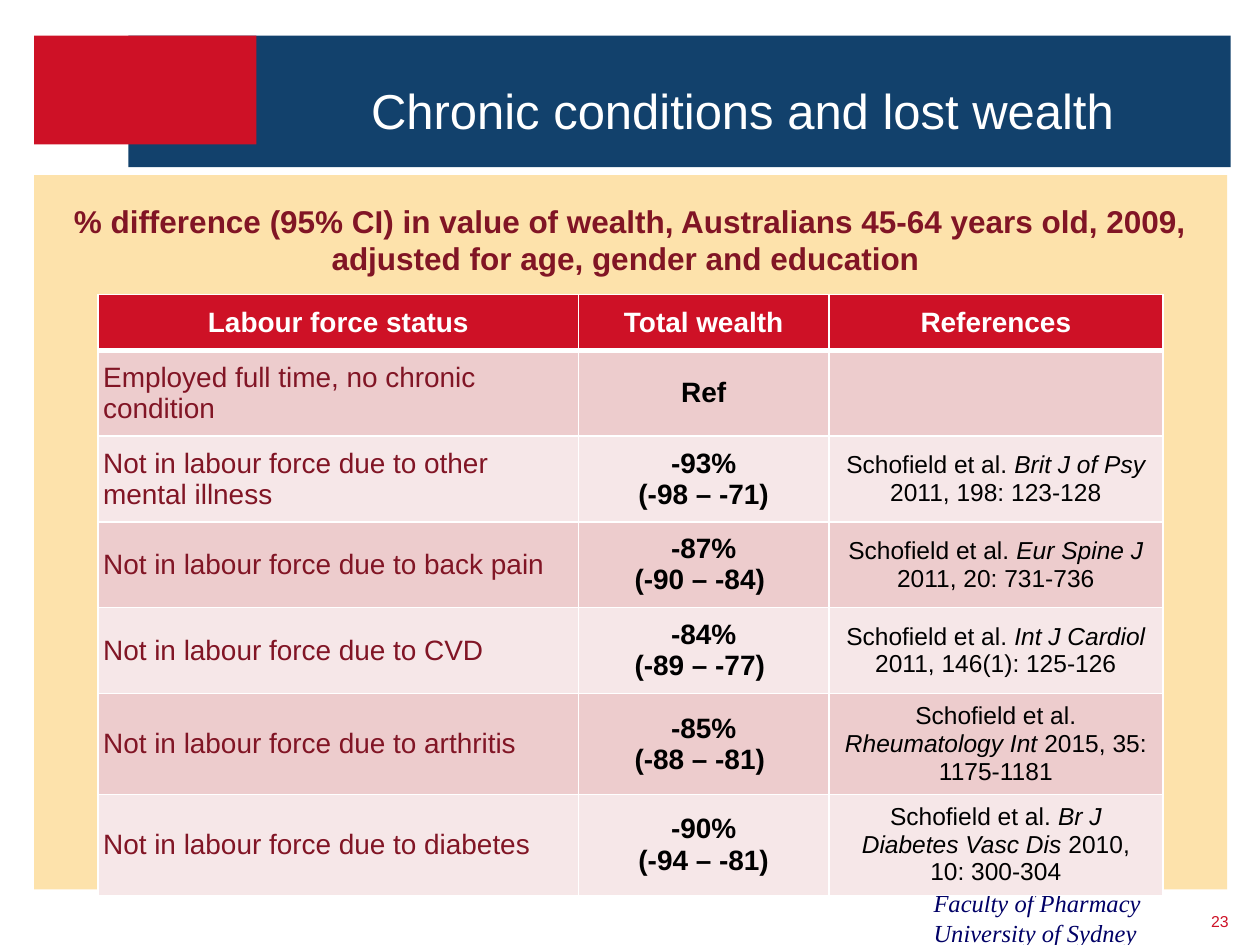
from dataclasses import dataclass

from lxml.etree import SubElement
from pptx import Presentation
from pptx.dml.color import RGBColor
from pptx.enum.shapes import MSO_SHAPE
from pptx.enum.text import MSO_ANCHOR, PP_ALIGN
from pptx.oxml.ns import qn
from pptx.util import Cm, Pt

NAVY, RED, CREAM, MAROON = "12416C", "CE1126", "FDE2AB", "811525"
WHITE, BLACK, INK = "FFFFFF", "000000", "000066"
BAND_FILLS = ("EDCCCD", "F6E7E8")


@dataclass(frozen=True)
class Frame:
    left: float
    top: float
    width: float
    height: float

    def lengths(self) -> tuple:
        return Cm(self.left), Cm(self.top), Cm(self.width), Cm(self.height)


@dataclass(frozen=True)
class Style:
    size: float
    color: str
    bold: bool = False
    italic: bool = False
    font: str = "Arial"
    align: PP_ALIGN = PP_ALIGN.CENTER


@dataclass(frozen=True)
class Finding:
    status: str
    wealth: str
    reference: tuple = ()


HEADERS = ("Labour force status", "Total wealth", "References")
FINDINGS = (
    Finding("Employed full time, no chronic condition", "Ref"),
    Finding("Not in labour force due to other mental illness", "-93%\n(-98 – -71)",
            ("Schofield et al. ", "Brit J of Psy", " 2011, 198: 123-128")),
    Finding("Not in labour force due to back pain", "-87%\n(-90 – -84) ",
            ("Schofield et al. ", "Eur Spine J", " 2011, 20: 731-736")),
    Finding("Not in labour force due to CVD", "-84%\n(-89 – -77) ",
            ("Schofield et al. ", "Int J Cardiol", " 2011, 146(1): 125-126")),
    Finding("Not in labour force due to arthritis", "-85%\n(-88 – -81) ",
            ("Schofield et al. ", "Rheumatology Int", " 2015, 35: 1175-1181")),
    Finding("Not in labour force due to diabetes", "-90%\n(-94 – -81)",
            ("Schofield et al. ", "Br J Diabetes Vasc Dis ", "2010, 10: 300-304")),
)
HEADER_STYLE = Style(16, WHITE, bold=True)
STATUS_STYLE = Style(16, MAROON, align=PP_ALIGN.LEFT)
WEALTH_STYLE = Style(16, BLACK, bold=True)
REFERENCE_STYLE = Style(14, BLACK)


def rgb(color: str) -> RGBColor:
    return RGBColor.from_string(color)


def format_text(text_frame, style: Style) -> None:
    for para in text_frame.paragraphs:
        para.alignment = style.align
        for span in para.runs:
            font = span.font
            font.name, font.size = style.font, Pt(style.size)
            font.bold, font.italic = style.bold, style.italic
            font.color.rgb = rgb(style.color)


def add_block(page, frame: Frame, color: str) -> None:
    block = page.shapes.add_shape(MSO_SHAPE.RECTANGLE, *frame.lengths())
    block.shadow.inherit = False
    block.fill.solid()
    block.fill.fore_color.rgb = rgb(color)
    block.line.fill.background()


def add_text(page, frame: Frame, text: str, style: Style, anchor=MSO_ANCHOR.TOP):
    text_frame = page.shapes.add_textbox(*frame.lengths()).text_frame
    text_frame.word_wrap = True
    text_frame.vertical_anchor = anchor
    text_frame.text = text
    format_text(text_frame, style)
    return text_frame


def set_borders(cell, bottom_width: float) -> None:
    properties = cell._tc.get_or_add_tcPr()
    for side, width in (("L", 1), ("R", 1), ("T", 1), ("B", bottom_width)):
        line = SubElement(properties, qn(f"a:ln{side}"), w=str(Pt(width)))
        SubElement(SubElement(line, qn("a:solidFill")), qn("a:srgbClr"), val=WHITE)


def style_cell(cell, fill: str, bottom_width: float = 1) -> None:
    cell.vertical_anchor = MSO_ANCHOR.MIDDLE
    set_borders(cell, bottom_width)
    cell.fill.solid()
    cell.fill.fore_color.rgb = rgb(fill)


def fill_cell(cell, text: str, style: Style) -> None:
    cell.text_frame.text = text
    format_text(cell.text_frame, style)


def fill_reference(cell, parts: tuple) -> None:
    para = cell.text_frame.paragraphs[0]
    for part in parts:
        para.add_run().text = part
    format_text(cell.text_frame, REFERENCE_STYLE)
    if parts:
        para.runs[1].font.italic = True


def add_wealth_table(page, frame: Frame) -> None:
    table = page.shapes.add_table(len(FINDINGS) + 1, len(HEADERS), *frame.lengths()).table
    for column, width in zip(table.columns, (9.68, 5.05, 6.73)):
        column.width = Cm(width)
    for index, row in enumerate(table.rows):
        row.height = Cm(1.73 if index else 1.12)

    for cell, header in zip(table.rows[0].cells, HEADERS):
        style_cell(cell, RED, bottom_width=3)
        fill_cell(cell, header, HEADER_STYLE)

    for index, finding in enumerate(FINDINGS):
        status, wealth, reference = table.rows[index + 1].cells
        for cell in (status, wealth, reference):
            style_cell(cell, BAND_FILLS[index % 2])
        status.margin_left = status.margin_right = Cm(0.1)
        status.margin_top = status.margin_bottom = Cm(0)
        fill_cell(status, finding.status, STATUS_STYLE)
        fill_cell(wealth, finding.wealth, WEALTH_STYLE)
        fill_reference(reference, finding.reference)


def main() -> None:
    deck = Presentation()
    deck.slide_width, deck.slide_height = Cm(25.4), Cm(19.05)
    page = deck.slides.add_slide(deck.slide_layouts[6])

    add_block(page, Frame(2.59, 0.72, 22.22, 2.65), NAVY)
    add_block(page, Frame(0.69, 0.72, 4.48, 2.19), RED)
    add_text(page, Frame(18.57, 17.78, 5.92, 1.45),
             "Faculty of Pharmacy\vUniversity of Sydney",
             Style(14, INK, italic=True, font="Times New Roman", align=PP_ALIGN.LEFT))
    add_block(page, Frame(0.69, 3.53, 24.05, 14.4), CREAM)

    title = add_text(page, Frame(5.16, 1.19, 19.61, 1.75),
                     "Chronic conditions and lost wealth", Style(28, WHITE), MSO_ANCHOR.BOTTOM)
    title.paragraphs[0].line_spacing = Pt(25)

    number = add_text(page, Frame(24.08, 18.29, 0.69, 0.58), "23",
                      Style(9, RED, align=PP_ALIGN.RIGHT), MSO_ANCHOR.MIDDLE)
    number.margin_left = number.margin_right = Cm(0)
    number.margin_top = number.margin_bottom = Cm(0)

    add_wealth_table(page, Frame(1.98, 5.94, 21.46, 11.5))
    add_text(page, Frame(0.99, 3.94, 23.42, 1.8),
             "% difference (95% CI) in value of wealth, Australians 45-64 years old, 2009, "
             "adjusted for age, gender and education ", Style(18, MAROON, bold=True))
    deck.save("out.pptx")


if __name__ == "__main__":
    main()
